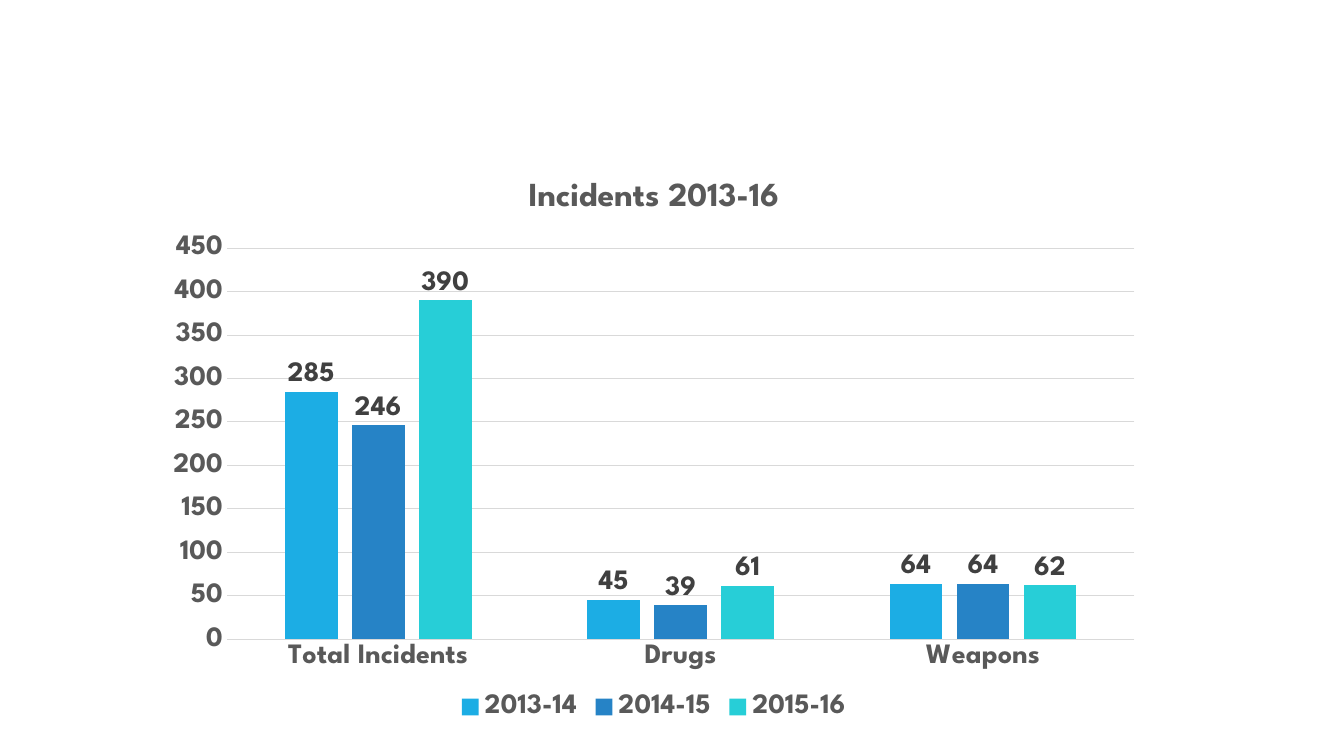
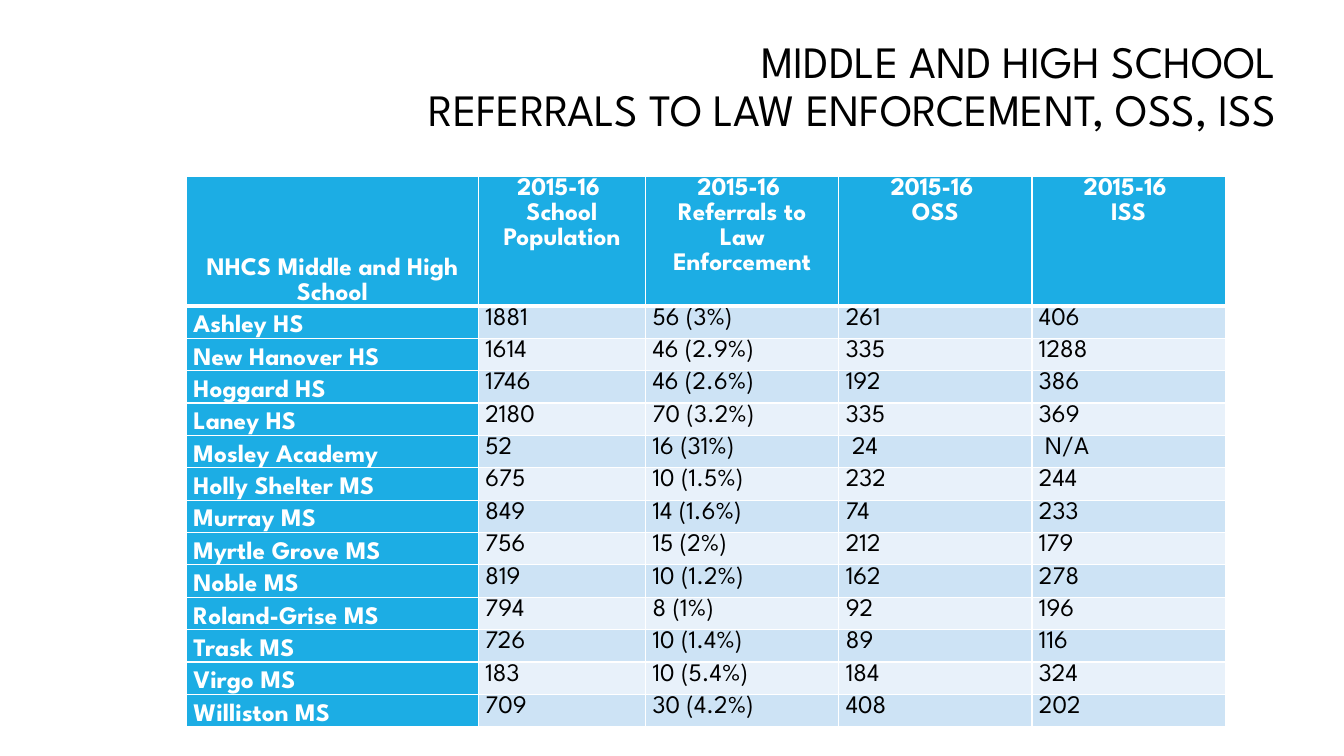
import pptx
import pptx.chart.data
import pptx.dml.color
import pptx.enum.chart
import pptx.enum.text
import pptx.util
from lxml import etree

Pt = pptx.util.Pt
ALIGN = pptx.enum.text.PP_ALIGN
ANCHOR = pptx.enum.text.MSO_ANCHOR
NS = "http://schemas.openxmlformats.org/drawingml/2006/main"

FONT = "League Spartan"
BLUE, MID_BLUE, TEAL = "1CADE4", "2683C6", "27CED7"
WHITE, BLACK = "FFFFFF", "000000"
DARK_GREY, GREY, LIGHT_GREY = "404040", "595959", "D9D9D9"
BANDS = ["CDE3F5", "E8F1FA"]


def rgb(value):
    return pptx.dml.color.RGBColor.from_string(value)


def set_font(font, size, color, bold):
    font.name = FONT
    font.size = Pt(size)
    font.color.rgb = rgb(color)
    font.bold = bold


prs = pptx.Presentation()
prs.slide_width, prs.slide_height = Pt(960), Pt(540)
blank = prs.slide_layouts[6]

# Slide 1: incidents chart
s = prs.slides.add_slide(blank)
data = pptx.chart.data.CategoryChartData()
data.categories = ["Total Incidents", "Drugs", "Weapons"]
data.add_series("2013-14", [285, 45, 64])
data.add_series("2014-15", [246, 39, 64])
data.add_series("2015-16", [390, 61, 62])
chart = s.shapes.add_chart(
    pptx.enum.chart.XL_CHART_TYPE.COLUMN_CLUSTERED,
    Pt(109.5), Pt(111.6), Pt(715), Pt(406.8), data).chart
set_font(chart.font, 20, BLACK, True)

chart.has_title = True
p = chart.chart_title.text_frame.paragraphs[0]
p.text = "Incidents 2013-16"
set_font(p.font, 24, GREY, True)
chart.chart_title.include_in_layout = False

chart.has_legend = True
chart.legend.position = pptx.enum.chart.XL_LEGEND_POSITION.BOTTOM
chart.legend.include_in_layout = False
set_font(chart.legend.font, 20, GREY, True)

for axis in (chart.category_axis, chart.value_axis):
    axis.major_tick_mark = pptx.enum.chart.XL_TICK_MARK.NONE
    axis.minor_tick_mark = pptx.enum.chart.XL_TICK_MARK.NONE
    set_font(axis.tick_labels.font, 20, GREY, True)
chart.value_axis.minimum_scale = 0
chart.value_axis.maximum_scale = 450
chart.value_axis.major_unit = 50
chart.value_axis.format.line.fill.background()
for line in (chart.category_axis.format.line,
             chart.value_axis.major_gridlines.format.line):
    line.color.rgb = rgb(LIGHT_GREY)
    line.width = Pt(0.75)

plot = chart.plots[0]
plot.gap_width = 219
plot.overlap = -27
plot.vary_by_categories = False
for series, color in zip(plot.series, [BLUE, MID_BLUE, TEAL]):
    series.format.fill.solid()
    series.format.fill.fore_color.rgb = rgb(color)
    labels = series.data_labels
    labels.show_value = True
    labels.position = pptx.enum.chart.XL_LABEL_POSITION.OUTSIDE_END
    set_font(labels.font, 20, DARK_GREY, True)

# Slide 2: referrals table
s = prs.slides.add_slide(blank)
tf = s.shapes.add_textbox(Pt(103), Pt(0), Pt(816), Pt(126)).text_frame
tf.word_wrap = True
tf.vertical_anchor = ANCHOR.MIDDLE
p = tf.paragraphs[0]
p.text = "MIDDLE AND HIGH SCHOOL\nREFERRALS TO LAW ENFORCEMENT, OSS, ISS"
p.alignment = ALIGN.RIGHT
p.line_spacing = 0.9
set_font(p.font, 32, BLACK, False)

rows = [
    ["NHCS Middle and High School", "2015-16 \nSchool Population",
     "2015-16 \nReferrals to Law Enforcement", "2015-16 \nOSS", "2015-16 \nISS"],
    ["Ashley HS", "1881", "56 (3%)", "261", "406"],
    ["New Hanover HS", "1614", "46 (2.9%)", "335", "1288"],
    ["Hoggard HS", "1746", "46 (2.6%)", "192", "386"],
    ["Laney HS", "2180", "70 (3.2%)", "335", "369"],
    ["Mosley Academy", "52", "16 (31%)", " 24", " N/A"],
    ["Holly Shelter MS", "675", "10 (1.5%)", "232", "244"],
    ["Murray MS", "849", "14 (1.6%)", "74", "233"],
    ["Myrtle Grove MS", "756", "15 (2%)", "212", "179"],
    ["Noble MS", "819", "10 (1.2%)", "162", "278"],
    ["Roland-Grise MS", "794", "8 (1%)", "92", "196"],
    ["Trask MS", "726", "10 (1.4%)", "89", "116"],
    ["Virgo MS", "183", "10 (5.4%)", "184", "324"],
    ["Williston MS", "709", "30 (4.2%)", "408", "202"],
]
widths = [208.5, 119.5, 138, 138, 138]
heights = [89.5] + [21.8] * (len(rows) - 1)
table = s.shapes.add_table(len(rows), len(widths), Pt(133.2), Pt(126),
                           Pt(sum(widths)), Pt(sum(heights))).table
for column, width in zip(table.columns, widths):
    column.width = Pt(width)

for i, values in enumerate(rows):
    table.rows[i].height = Pt(heights[i])
    for j, value in enumerate(values):
        cell = table.cell(i, j)
        heading = i == 0 or j == 0
        cell.fill.solid()
        cell.fill.fore_color.rgb = rgb(BLUE if heading else BANDS[(i - 1) % 2])
        cell.margin_left = cell.margin_right = Pt(5)
        cell.margin_top = cell.margin_bottom = Pt(0)
        cell.vertical_anchor = ANCHOR.BOTTOM if j == 0 else ANCHOR.TOP
        cell.text_frame.text = value
        for p in cell.text_frame.paragraphs:
            p.alignment = ALIGN.CENTER if i == 0 else ALIGN.LEFT
            p.line_spacing = 1.07
            set_font(p.font, 18, WHITE if heading else BLACK, heading)
        # Borders must come before the fill in the cell properties
        for k, side in enumerate("LRTB"):
            thick = (side, i) in (("B", 0), ("T", 1))
            border = etree.Element(f"{{{NS}}}ln{side}", w=str(Pt(3 if thick else 1)))
            fill = etree.SubElement(border, f"{{{NS}}}solidFill")
            etree.SubElement(fill, f"{{{NS}}}srgbClr", val=WHITE)
            cell._tc.tcPr.insert(k, border)

prs.save("out.pptx")
